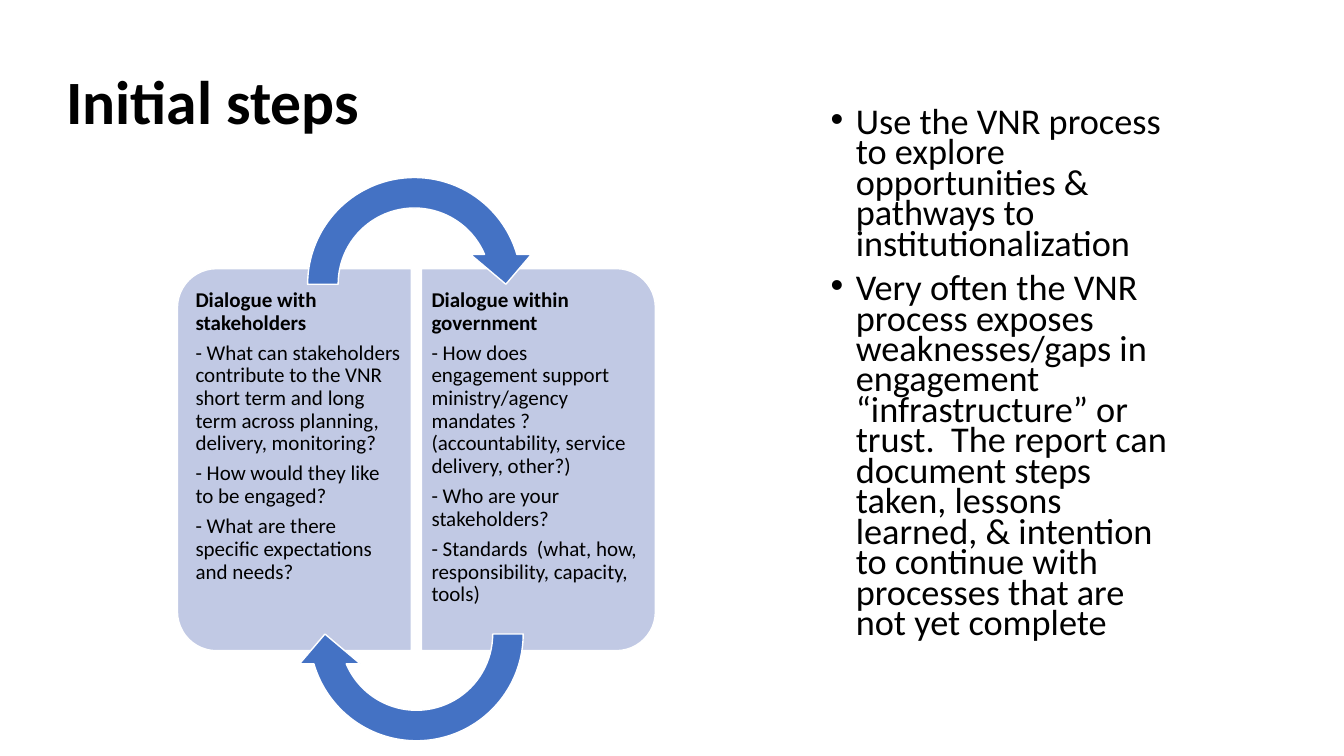
import lxml.etree
import pptx
import pptx.dml.color
import pptx.enum.shapes
import pptx.enum.text
import pptx.oxml.ns
import pptx.util

Inches = pptx.util.Inches
Pt = pptx.util.Pt
SHAPE = pptx.enum.shapes.MSO_SHAPE
ANCHOR = pptx.enum.text.MSO_ANCHOR


def color(value):
    return pptx.dml.color.RGBColor.from_string(value)


class StepsSlide:
    font = "Calibri"
    ink = "000000"
    outline = "FFFFFF"
    panel_fill = "C1C9E4"
    arrow_fill = "4472C4"

    def __init__(self, slide):
        self.slide = slide

    def text(self, box, paragraphs, size, bold_first=False, spacing=0.9, before=0, after=0,
             insets=(0.1, 0.05, 0.1, 0.05), anchor=ANCHOR.TOP, bullets=False):
        frame = self.slide.shapes.add_textbox(*map(Inches, box)).text_frame
        frame.word_wrap = True
        frame.vertical_anchor = anchor
        frame.margin_left, frame.margin_top, frame.margin_right, frame.margin_bottom = map(Inches, insets)
        frame.text = "\n".join(paragraphs)
        for index, paragraph in enumerate(frame.paragraphs):
            paragraph.line_spacing = spacing
            paragraph.space_before = Pt(before)
            paragraph.space_after = Pt(after)
            if bullets:
                self.bullet(paragraph)
            for run in paragraph.runs:
                run.font.name = self.font
                run.font.size = Pt(size)
                run.font.bold = bold_first and index == 0
                run.font.color.rgb = color(self.ink)

    def bullet(self, paragraph):
        properties = paragraph._p.get_or_add_pPr()
        properties.set("marL", str(Inches(0.25)))
        properties.set("indent", str(-Inches(0.25)))
        for tag, key, value in (("a:buFont", "typeface", "Arial"), ("a:buChar", "char", "•")):
            lxml.etree.SubElement(properties, pptx.oxml.ns.qn(tag)).set(key, value)

    def shape(self, kind, center, size, fill, rotation, adjustments):
        left, top = (middle - length / 2 for middle, length in zip(center, size))
        shape = self.slide.shapes.add_shape(kind, *map(Inches, (left, top, *size)))
        shape.shadow.inherit = False
        shape.rotation = rotation
        for index, value in enumerate(adjustments):
            shape.adjustments[index] = value
        shape.fill.solid()
        shape.fill.fore_color.rgb = color(fill)
        shape.line.color.rgb = color(self.outline)
        shape.line.width = Pt(1)

    def panel(self, center_x, rotation, text_left, insets, paragraphs):
        self.shape(SHAPE.ROUND_2_SAME_RECTANGLE, (center_x, 4.56), (3.79, 2.32),
                   self.panel_fill, rotation, (0.167, 0))
        self.text((text_left, 2.77, 2.2, 3.56), paragraphs, 15, bold_first=True, after=5.25, insets=insets)

    def cycle_arrow(self, center, rotation):
        self.shape(SHAPE.CIRCULAR_ARROW, center, (2.42, 2.42), self.arrow_fill, rotation,
                   (0.125, 11.423, 204.577, 108, 0.125))


def main():
    presentation = pptx.Presentation()
    presentation.slide_width = Inches(13.33)
    presentation.slide_height = Inches(7.5)
    steps = StepsSlide(presentation.slides.add_slide(presentation.slide_layouts[6]))

    steps.text((0.56, 0.31, 11.5, 1.45), ["Initial steps"], 44, bold_first=True, anchor=ANCHOR.MIDDLE)
    steps.panel(2.92, 270, 1.88, (0.06, 0.1, 0.09, 0.1), [
        "Dialogue with stakeholders",
        "- What can stakeholders contribute to the VNR short term and long term across planning, "
        "delivery, monitoring?",
        "- How would they like to be engaged?",
        "- What are there specific expectations and needs?",
    ])
    steps.panel(5.34, 90, 4.19, (0.09, 0.1, 0.06, 0.1), [
        "Dialogue within government",
        "- How does engagement support ministry/agency mandates ? "
        "(accountability, service delivery, other?)",
        "- Who are your stakeholders?",
        "- Standards  (what, how, responsibility, capacity, tools)",
    ])
    steps.cycle_arrow((4.11, 2.82), 0)
    steps.cycle_arrow((4.13, 6.29), 180)
    steps.text((8.14, 1.04, 3.66, 5.8), [
        "Use the VNR process to explore opportunities & pathways to institutionalization",
        "Very often the VNR process exposes weaknesses/gaps in engagement “infrastructure” or trust.  "
        "The report can document steps taken, lessons learned, & intention to continue with processes "
        "that are not yet complete",
    ], 25.9, spacing=0.7, before=10, bullets=True)

    presentation.save("out.pptx")


if __name__ == "__main__":
    main()
